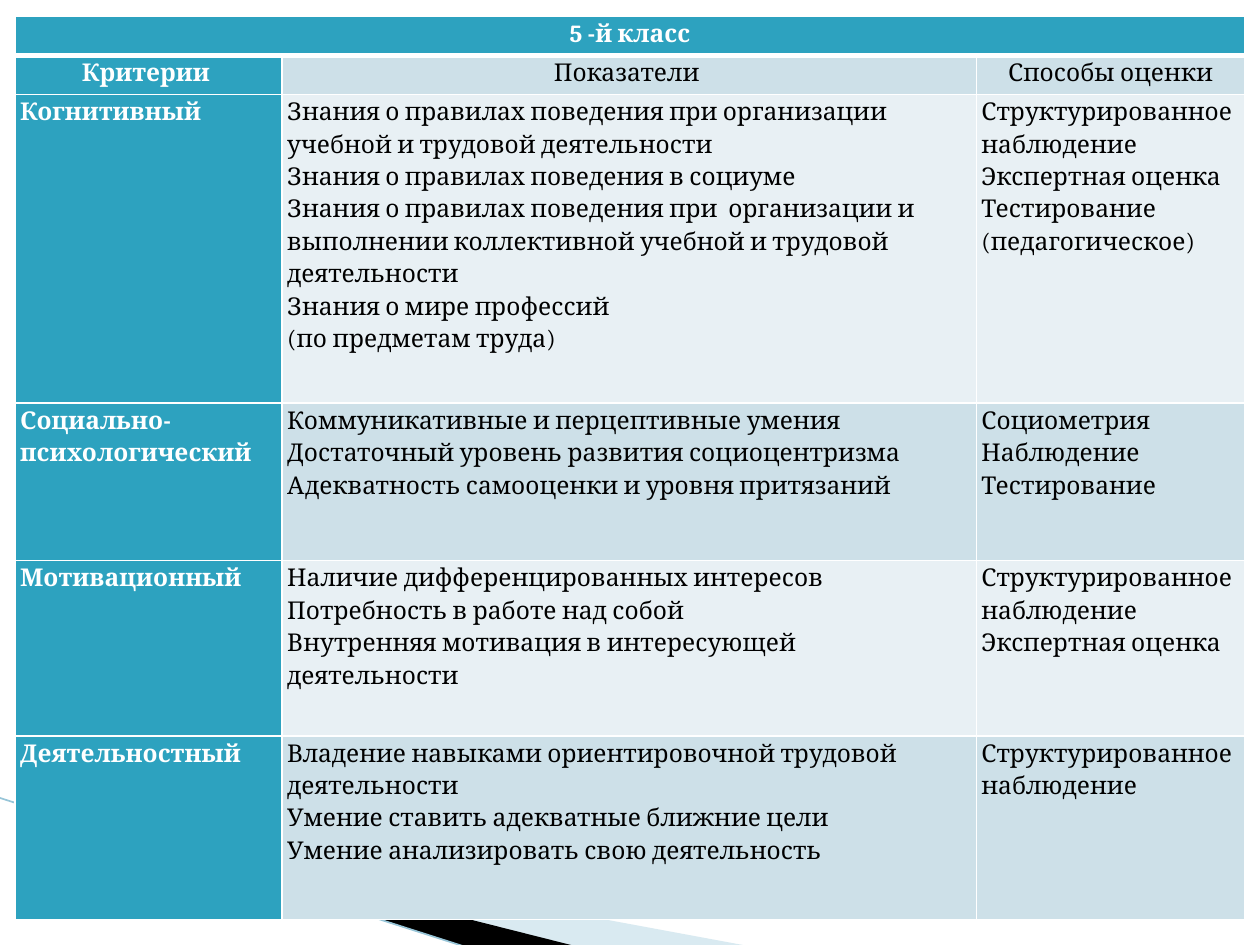
from dataclasses import dataclass

from lxml.etree import SubElement
from pptx import Presentation
from pptx.dml.color import RGBColor
from pptx.enum.shapes import MSO_CONNECTOR
from pptx.enum.text import PP_ALIGN
from pptx.oxml.ns import qn
from pptx.util import Inches, Pt


@dataclass(frozen=True)
class Theme:
    font: str = "Cambria"
    size: float = 14
    spacing: float = 1.15
    accent: str = "2DA2BF"
    band_dark: str = "CDE0E8"
    band_light: str = "E8F0F4"
    white: str = "FFFFFF"
    black: str = "000000"
    wave: str = "A0CBDC"
    wave_line: str = "97C5D8"


@dataclass(frozen=True)
class Criterion:
    name: str
    indicators: list[str]
    methods: list[str]
    height: float


@dataclass(frozen=True)
class Wave:
    points: list[tuple[float, float]]
    color: str
    opacity: int


THEME = Theme()
COLUMN_WIDTHS = [2.12, 5.51, 2.13]
HEADER_HEIGHT = 0.31
OBSERVATION = "Структурированное наблюдение"
EXPERT = "Экспертная оценка"

TITLE = "5 -й класс"
HEADINGS = ["Критерии ", "Показатели ", "Способы оценки"]
CRITERIA = [
    Criterion("Когнитивный", [
        "Знания о правилах поведения при организации учебной и трудовой деятельности",
        "Знания о правилах поведения в социуме",
        "Знания о правилах поведения при  организации и выполнении "
        "коллективной учебной и трудовой деятельности",
        "Знания о мире профессий",
        "(по предметам труда)",
    ], [OBSERVATION, EXPERT, "Тестирование (педагогическое)"], 2.45),
    Criterion("Социально-психологический", [
        "Коммуникативные и перцептивные умения",
        "Достаточный уровень развития социоцентризма",
        "Адекватность самооценки и уровня притязаний",
    ], ["Социометрия", "Наблюдение", "Тестирование"], 1.25),
    Criterion("Мотивационный", [
        "Наличие дифференцированных интересов",
        "Потребность в работе над собой",
        "Внутренняя мотивация в интересующей деятельности",
    ], [OBSERVATION, EXPERT], 1.39),
    Criterion("Деятельностный", [
        "Владение навыками ориентировочной трудовой деятельности",
        "Умение ставить адекватные ближние цели",
        "Умение анализировать свою деятельность",
    ], [OBSERVATION], 1.46),
]
WAVES = [
    Wave([(0.55, 6.51), (5.95, 7.51), (4.56, 7.51), (0.55, 6.5)], THEME.wave, 40),
    Wave([(0.53, 6.49), (4.57, 7.51), (3.72, 7.52), (0.54, 6.5)], THEME.black, 100),
]


def rgb(color: str) -> RGBColor:
    return RGBColor.from_string(color)


def draw_wave(s, wave: Wave) -> None:
    points = [(Inches(x), Inches(y)) for x, y in wave.points]
    builder = s.shapes.build_freeform(*points[0], scale=1.0)
    builder.add_line_segments(points[1:], close=True)
    sp = builder.convert_to_shape()
    sp.shadow.inherit = False
    sp.fill.solid()
    sp.fill.fore_color.rgb = rgb(wave.color)
    sp.line.fill.background()
    if wave.opacity < 100:
        color = sp.fill._xPr.find(qn("a:solidFill"))[0]
        SubElement(color, qn("a:alpha"), val=str(wave.opacity * 1000))


def draw_wave_line(s) -> None:
    line = s.shapes.add_connector(MSO_CONNECTOR.STRAIGHT, Inches(-0.01), Inches(6.33),
                                  Inches(3.71), Inches(7.52))
    line.line.color.rgb = rgb(THEME.wave_line)
    line.line.width = Pt(0.95)
    SubElement(line._element.spPr, qn("a:effectLst"))


def set_borders(cell, top: float = 1, bottom: float = 1) -> None:
    tc_pr = cell._tc.get_or_add_tcPr()
    for side, width in (("L", 1), ("R", 1), ("T", top), ("B", bottom)):
        ln = SubElement(tc_pr, qn(f"a:ln{side}"), w=str(Pt(width)))
        SubElement(SubElement(ln, qn("a:solidFill")), qn("a:srgbClr"), val=THEME.white)


def fill_cell(cell, lines: list[str], fill: str, centered: bool = False) -> None:
    cell.margin_left = cell.margin_right = Inches(0.04)
    cell.margin_top = cell.margin_bottom = 0
    cell.fill.solid()
    cell.fill.fore_color.rgb = rgb(fill)
    accented = fill == THEME.accent
    tf = cell.text_frame
    tf.text = "\n".join(lines)
    for p in tf.paragraphs:
        p.alignment = PP_ALIGN.CENTER if centered else PP_ALIGN.LEFT
        p.line_spacing = THEME.spacing
        for r in p.runs:
            r.font.name = THEME.font
            r.font.size = Pt(THEME.size)
            r.font.bold = accented
            r.font.color.rgb = rgb(THEME.white if accented else THEME.black)


def draw_table(s) -> None:
    heights = [HEADER_HEIGHT] * 2 + [c.height for c in CRITERIA]
    table = s.shapes.add_table(len(heights), len(COLUMN_WIDTHS), Inches(0.12), Inches(0.13),
                               Inches(sum(COLUMN_WIDTHS)), Inches(sum(heights))).table
    for column, width in zip(table.columns, COLUMN_WIDTHS):
        column.width = Inches(width)
    for i, (row, height) in enumerate(zip(table.rows, heights)):
        row.height = Inches(height)
        for cell in row.cells:
            set_borders(cell, top=3 if i == 1 else 1, bottom=3 if i == 0 else 1)

    # Title across all columns
    table.cell(0, 0).merge(table.cell(0, len(COLUMN_WIDTHS) - 1))
    fill_cell(table.cell(0, 0), [TITLE], THEME.accent, centered=True)

    # Headings and criteria, in alternating bands
    body = [[[h] for h in HEADINGS]]
    body += [[[c.name], c.indicators, c.methods] for c in CRITERIA]
    for i, row in enumerate(body):
        band = THEME.band_light if i % 2 else THEME.band_dark
        for j, lines in enumerate(row):
            fill_cell(table.cell(i + 1, j), lines, band if j else THEME.accent,
                      centered=i == 0)


def main() -> None:
    prs = Presentation()
    prs.slide_width, prs.slide_height = Inches(10), Inches(7.5)
    s = prs.slides.add_slide(prs.slide_layouts[6])

    # Background waves
    for wave in WAVES:
        draw_wave(s, wave)
    draw_wave_line(s)

    # Criteria table
    draw_table(s)
    prs.save("out.pptx")


if __name__ == "__main__":
    main()
